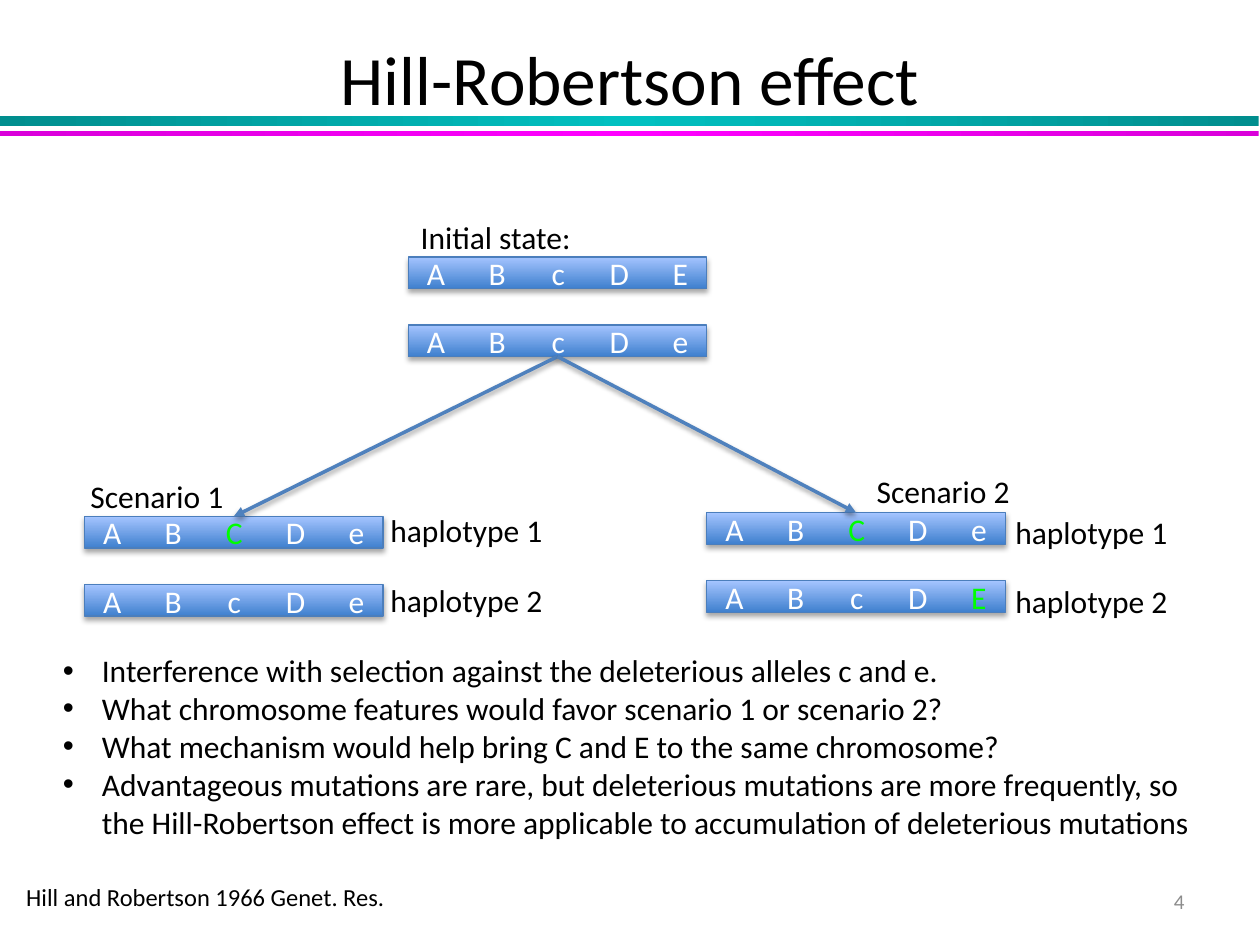
from lxml import etree
from pptx import Presentation
from pptx.dml.color import RGBColor
from pptx.enum import shapes, text
from pptx.oxml import ns
from pptx.util import Inches, Pt

FONT = "Calibri"
BLACK = RGBColor(0x00, 0x00, 0x00)
WHITE = RGBColor(0xFF, 0xFF, 0xFF)
GRAY = RGBColor(0x8C, 0x8C, 0x8C)
GREEN = RGBColor(0x00, 0xFF, 0x00)
BAR_LINE = RGBColor(0x4B, 0x7E, 0xBC)
ARROW_BLUE = RGBColor(0x4F, 0x81, 0xBD)
BAR_GRADIENT = ("3F80CE", "A4C4FF")

# Content
TITLE = "Hill-Robertson effect"
BANDS = [  # top, height, gradient colours
    (0.92, 0.08, ("008E8E", "00C0C0", "008E8E")),
    (1.04, 0.04, ("DA00DA", "FF00FF", "DA00DA")),
]
BAR_WIDTH, BAR_HEIGHT, BAR_PITCH = 2.37, 0.25, 0.54
FIRST_ALLELE, ALLELE_PITCH = 0.22, 0.485
PAIRS = {  # left, top, the two haplotypes, index of the mutated allele in each
    "initial": (3.24, 2.04, [("ABcDE", None), ("ABcDe", None)]),
    "scenario 1": (0.67, 4.1, [("ABCDe", 2), ("ABcDe", None)]),
    "scenario 2": (5.61, 4.07, [("ABCDe", 2), ("ABcDE", 4)]),
}
LABELS = [  # text, left, top, width
    ("Initial state:", 3.24, 1.68, 2.19),
    ("Scenario 1", 0.62, 3.74, 1.4),
    ("Scenario 2", 6.86, 3.7, 1.4),
    ("haplotype 1", 3, 4.01, 1.45),
    ("haplotype 2", 3, 4.56, 1.45),
    ("haplotype 1", 7.96, 4.02, 1.45),
    ("haplotype 2", 7.96, 4.57, 1.45),
]
BULLETS = [
    "Interference with selection against the deleterious alleles c and e.",
    "What chromosome features would favor scenario 1 or scenario 2?",
    "What mechanism would help bring C and E to the same chromosome?",
    "Advantageous mutations are rare, but deleterious mutations are more "
    "frequently, so the Hill-Robertson effect is more applicable to "
    "accumulation of deleterious mutations",
]
CITATION = "Hill and Robertson 1966 Genet. Res."
PAGE_NUMBER = "4"


def add_child(parent, tag, **attributes):
    child = etree.SubElement(parent, ns.qn(tag))
    for name, value in attributes.items():
        child.set(name, str(value))
    return child


def format_run(run, size, color):
    run.font.name = FONT
    run.font.size = Pt(size)
    run.font.color.rgb = color


def set_gradient(shape, colors, angle):
    shape.fill.gradient()
    shape.fill.gradient_angle = angle
    stops = shape._element.spPr.find(".//" + ns.qn("a:gsLst"))
    for stop in list(stops):
        stops.remove(stop)
    for index, color in enumerate(colors):
        position = 100000 * index // (len(colors) - 1)
        add_child(add_child(stops, "a:gs", pos=position), "a:srgbClr", val=color)


def add_shadow(shape, distance, opacity):
    effects = add_child(shape._element.spPr, "a:effectLst")
    shadow = add_child(effects, "a:outerShdw", blurRad=Pt(3.1), dist=Pt(distance),
                       dir=90 * 60000, rotWithShape=0)
    color = add_child(shadow, "a:srgbClr", val="000000")
    add_child(color, "a:alpha", val=opacity * 1000)


def add_rectangle(slide, left, top, width, height):
    return slide.shapes.add_shape(shapes.MSO_SHAPE.RECTANGLE, Inches(left),
                                  Inches(top), Inches(width), Inches(height))


def add_text(slide, lines, left, top, width, height, size=18, color=BLACK):
    box = slide.shapes.add_textbox(Inches(left), Inches(top),
                                   Inches(width), Inches(height))
    frame = box.text_frame
    frame.word_wrap = True
    frame.text = "\n".join(lines)
    for paragraph in frame.paragraphs:
        format_run(paragraph.runs[0], size, color)
    return frame


def add_haplotype(slide, left, top, alleles, mutated):
    bar = add_rectangle(slide, left, top, BAR_WIDTH, BAR_HEIGHT)
    set_gradient(bar, BAR_GRADIENT, 90)
    bar.line.color.rgb = BAR_LINE
    bar.line.width = Pt(0.75)
    add_shadow(bar, 1.8, 35)
    frame = bar.text_frame
    frame.word_wrap = True
    frame.margin_left = frame.margin_right = 0
    frame.vertical_anchor = text.MSO_ANCHOR.MIDDLE
    paragraph = frame.paragraphs[0]
    paragraph.alignment = text.PP_ALIGN.LEFT
    # One centred tab stop per allele
    tabs = add_child(paragraph._p.get_or_add_pPr(), "a:tabLst")
    for index, allele in enumerate(alleles):
        stop = Inches(FIRST_ALLELE + index * ALLELE_PITCH)
        add_child(tabs, "a:tab", pos=stop, algn="ctr")
        run = paragraph.add_run()
        run.text = "\t" + allele
        format_run(run, 18, GREEN if index == mutated else WHITE)
    return bar


def add_arrow(slide, start, end):
    arrow = slide.shapes.add_connector(shapes.MSO_CONNECTOR.STRAIGHT, 0, 0, 0, 0)
    arrow.begin_connect(start, 2)  # bottom centre
    arrow.end_connect(end, 0)  # top centre
    arrow.line.color.rgb = ARROW_BLUE
    arrow.line.width = Pt(2)
    add_child(arrow.line._get_or_add_ln(), "a:tailEnd", type="triangle")
    add_shadow(arrow, 1.6, 38)


def main():
    presentation = Presentation()
    presentation.slide_width, presentation.slide_height = Inches(10), Inches(7.5)
    slide = presentation.slides.add_slide(presentation.slide_layouts[5])

    # Title and the two bands under it
    title = slide.shapes.title
    title.left, title.top = Inches(0.5), Inches(0.3)
    title.width, title.height = Inches(9), Inches(0.64)
    title.text_frame.text = TITLE
    title.text_frame.vertical_anchor = text.MSO_ANCHOR.MIDDLE
    title.text_frame.paragraphs[0].alignment = text.PP_ALIGN.CENTER
    format_run(title.text_frame.paragraphs[0].runs[0], 39.6, BLACK)
    for top, height, colors in BANDS:
        band = add_rectangle(slide, 0, top, 9.99, height)
        set_gradient(band, colors, 0)
        band.line.fill.background()
        band.shadow.inherit = False

    # Haplotype pairs and the arrows between them
    bars = {}
    for name, (left, top, haplotypes) in PAIRS.items():
        bars[name] = [
            add_haplotype(slide, left, top + row * BAR_PITCH, alleles, mutated)
            for row, (alleles, mutated) in enumerate(haplotypes)
        ]
    for name in ("scenario 1", "scenario 2"):
        add_arrow(slide, bars["initial"][1], bars[name][0])

    # Labels
    for label, left, top, width in LABELS:
        add_text(slide, [label], left, top, width, 0.4)

    # Bullets
    frame = add_text(slide, BULLETS, 0.4, 5.12, 9.21, 1.62)
    for paragraph in frame.paragraphs:
        properties = paragraph._p.get_or_add_pPr()
        properties.set("marL", str(Inches(0.31)))
        properties.set("indent", str(-Inches(0.31)))
        add_child(properties, "a:buFont", typeface="Arial")
        add_child(properties, "a:buChar", char="•")

    # Citation and page number
    add_text(slide, [CITATION], 0.11, 6.95, 3.13, 0.34, size=14)
    number = add_text(slide, [PAGE_NUMBER], 8.92, 6.95, 0.58, 0.4, 12, GRAY)
    number.vertical_anchor = text.MSO_ANCHOR.MIDDLE
    number.paragraphs[0].alignment = text.PP_ALIGN.RIGHT

    presentation.save("out.pptx")


if __name__ == "__main__":
    main()
